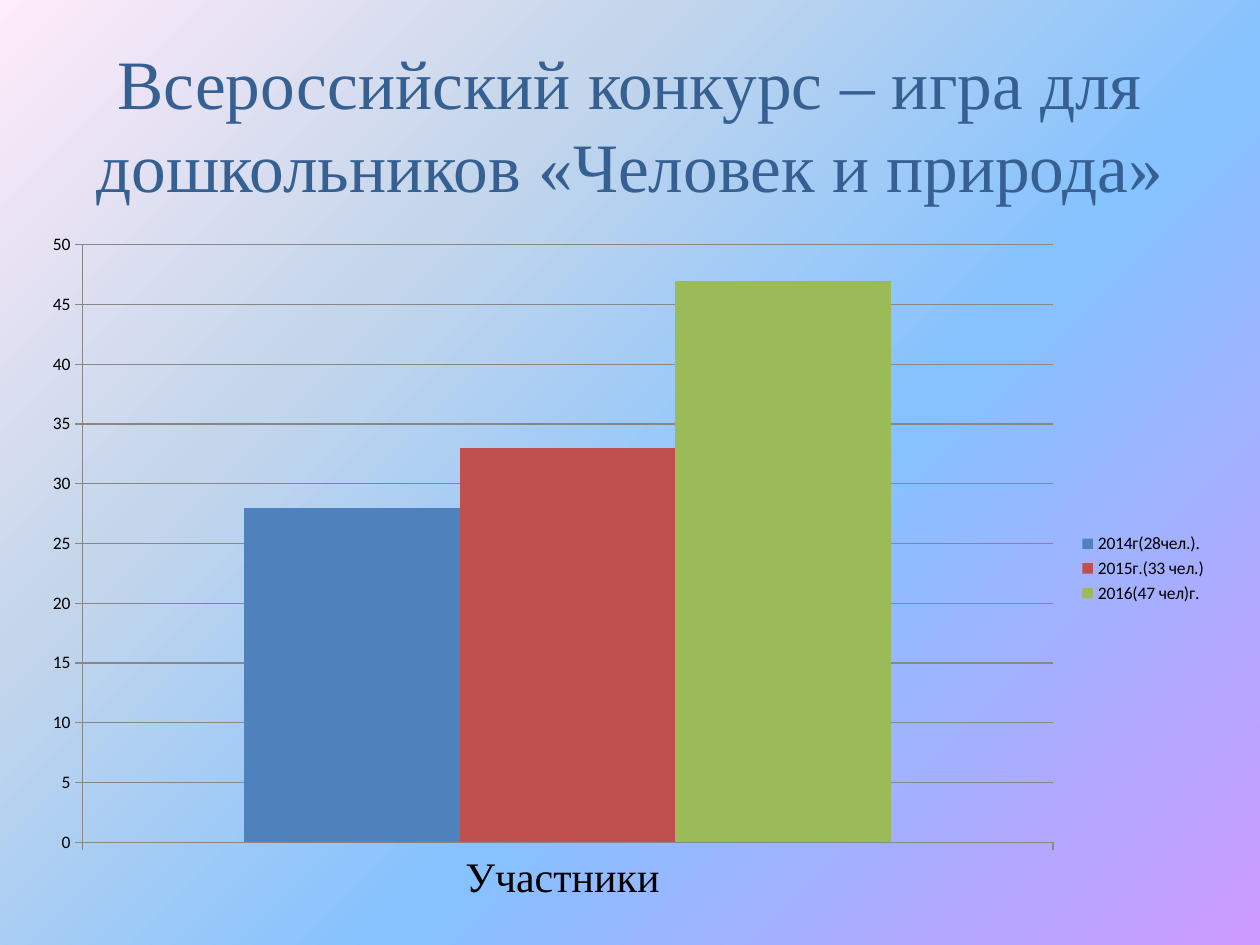
from lxml import etree
from pptx import Presentation
from pptx.chart.data import CategoryChartData
from pptx.dml.color import RGBColor
from pptx.enum.chart import XL_CHART_TYPE as ChartType, XL_LEGEND_POSITION as LegendPosition, XL_TICK_MARK as TickMark
from pptx.enum.text import MSO_ANCHOR as Anchor, PP_ALIGN as Align
from pptx.oxml import parse_xml
from pptx.oxml.ns import nsdecls, qn
from pptx.util import Pt

COLORS = {
    "title": "376092", "text": "000000", "axis": "878787",
    "2014": "4F81BD", "2015": "C0504D", "2016": "9BBB59",
    "purple": "CC99FF", "blue": "85C2FF", "mist": "C4D6EB", "pink": "FFEBFA",
}


def px(length):
    return round(length * 914400 / 126)


def rgb(name):
    return RGBColor.from_string(COLORS[name])


deck = Presentation()
deck.slide_width, deck.slide_height = px(1260), px(945)
slide = deck.slides.add_slide(deck.slide_layouts[6])

slide.background.fill.solid()
solid = slide.background._cSld.find(".//" + qn("a:solidFill"))
gradient = parse_xml(
    f'<a:gradFill {nsdecls("a")} rotWithShape="1"><a:gsLst/>'
    '<a:path path="circle"><a:fillToRect l="100000" t="100000"/></a:path></a:gradFill>'
)
for position, name in [(0, "purple"), (40, "blue"), (70, "mist"), (100, "pink")]:
    stop = etree.SubElement(gradient[0], qn("a:gs"), pos=str(position * 1000))
    etree.SubElement(stop, qn("a:srgbClr"), val=COLORS[name])
solid.getparent().replace(solid, gradient)

heading = slide.shapes.add_textbox(px(63), px(44), px(1134), px(158)).text_frame
heading.word_wrap = True
heading.vertical_anchor = Anchor.MIDDLE
heading.paragraphs[0].alignment = Align.CENTER
title = heading.paragraphs[0].add_run()
title.text = "Всероссийский конкурс – игра для дошкольников «Человек и природа»"
title.font.name = "Times New Roman"
title.font.size = Pt(39.6)
title.font.color.rgb = rgb("title")

participants = CategoryChartData()
participants.categories = ["Участники "]
years = [("2014", "2014г(28чел.).", 28), ("2015", "2015г.(33 чел.)", 33), ("2016", "2016(47 чел)г.", 47)]
for year, label, count in years:
    participants.add_series(label, [count])

chart = slide.shapes.add_chart(
    ChartType.COLUMN_CLUSTERED, px(29), px(221), px(1191), px(695), participants
).chart
chart.has_title = False
chart.font.name = "Calibri"
chart.font.size = Pt(10)
chart.font.color.rgb = rgb("text")
chart.has_legend = True
chart.legend.position = LegendPosition.RIGHT
chart.legend.include_in_layout = False

columns = chart.plots[0]
columns.gap_width = 150
columns.overlap = 0
columns.vary_by_categories = False
for series, (year, label, count) in zip(columns.series, years):
    series.format.fill.solid()
    series.format.fill.fore_color.rgb = rgb(year)

counts, groups = chart.value_axis, chart.category_axis
counts.minimum_scale, counts.maximum_scale, counts.major_unit = 0, 50, 5
counts.has_major_gridlines = True
for line in (counts.format.line, groups.format.line, counts.major_gridlines.format.line):
    line.color.rgb = rgb("axis")
    line.width = Pt(0.75)
for axis in (counts, groups):
    axis.major_tick_mark = TickMark.OUTSIDE
    axis.minor_tick_mark = TickMark.NONE
groups.tick_labels.font.name = "Times New Roman"
groups.tick_labels.font.size = Pt(24)
groups.tick_labels.font.color.rgb = rgb("text")

deck.save("out.pptx")
